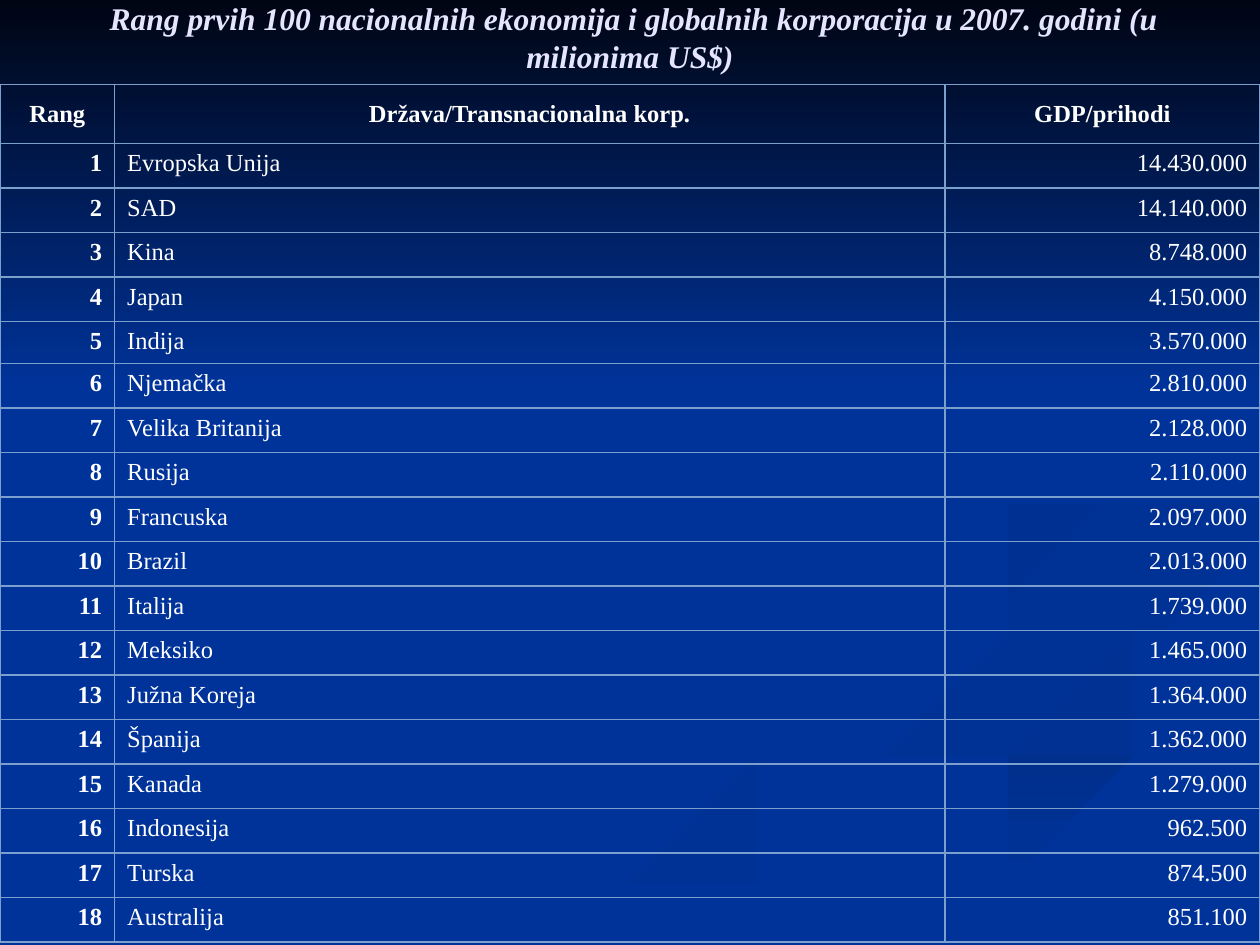
import pptx
import pptx.dml.color
import pptx.enum.shapes
import pptx.enum.text
import pptx.oxml
import pptx.oxml.ns
import pptx.util
from pptx.util import Inches

ALIGN = pptx.enum.text.PP_ALIGN
ANCHOR = pptx.enum.text.MSO_ANCHOR
BLUE = "003399"
FONT = "Times New Roman"
BORDER = "7BA0CD"
TITLE = " Rang prvih 100 nacionalnih ekonomija i globalnih korporacija u 2007. godini (u milionima US$)"
HEADERS = ["Rang", "Država/Transnacionalna korp.", "GDP/prihodi"]
ECONOMIES = [
    ("Evropska Unija", "14.430.000"), ("SAD", "14.140.000"),
    ("Kina", "8.748.000"), ("Japan", "4.150.000"),
    ("Indija", "3.570.000"), ("Njemačka", "2.810.000"),
    ("Velika Britanija", "2.128.000"), ("Rusija", "2.110.000"),
    ("Francuska", "2.097.000"), ("Brazil", "2.013.000"),
    ("Italija", "1.739.000"), ("Meksiko", "1.465.000"),
    ("Južna Koreja", "1.364.000"), ("Španija", "1.362.000"),
    ("Kanada", "1.279.000"), ("Indonesija", "962.500"),
    ("Turska", "874.500"), ("Australija", "851.100"),
]
RIBBONS = [
    ((BLUE, "003193"), 0, [
        (7.81, 5.53), (6.82, 5.19), (5.94, 4.85), (5.75, 4.59), (5.81, 4.84), (6.97, 5.25),
        (7.81, 5.56), (7.74, 5.83), (6.16, 6.29), (4.17, 6.9), (3, 7.49), (3.61, 7.49),
        (5.64, 6.65), (7.56, 6.14), (8, 5.81)]),
    ((BLUE, "003193"), 45, [
        (9.43, 5.7), (9.05, 5.4), (7.92, 5.09), (7.24, 4.64), (7.46, 5), (8.38, 5.36),
        (9.18, 5.81), (8.94, 6.05), (9.32, 5.89)]),
    (("002F8C", BLUE), 90, [
        (5.03, 7.49), (5.71, 7.49), (7.22, 6.82), (9.98, 6.09), (9.98, 5.81), (8.31, 6.29),
        (6.3, 6.93)]),
    ((BLUE, BLUE), 0, [
        (7.25, 4.64), (7.93, 5.09), (9.05, 5.4), (9.43, 5.7), (8.92, 6.05), (7.04, 6.55),
        (4.77, 7.49), (5.03, 7.49), (6.96, 6.69), (9.99, 5.81), (9.99, 5.38), (8.66, 5.09),
        (7.81, 4.63), (8.5, 4.27), (9.99, 4.02), (9.99, 3.87), (8.3, 4.15)]),
    (("003091", BLUE), 45, [
        (7.81, 4.6), (8.26, 4.96), (8.05, 4.72), (8.43, 4.48), (9.98, 4.2), (9.98, 4.02),
        (8.35, 4.3)]),
    (("002F8E", BLUE), 45, [
        (6.83, 4.3), (8.25, 4.02), (8.94, 3.44), (8.54, 2.83), (7.62, 2.33), (8.46, 2.79),
        (8.89, 3.35), (8.42, 3.78), (6.49, 4.2), (5.77, 4.62), (6.22, 5), (5.93, 4.7)]),
]


def color(value):
    return pptx.dml.color.RGBColor.from_string(value)


def write(para, words, align, **formats):
    para.alignment = align
    span = para.add_run()
    span.text = words
    span.font.color.rgb = color(formats.pop("ink", "FFFFFF"))
    for name, value in {"name": FONT, **formats}.items():
        setattr(span.font, name, value)


def smooth_outline(points, steps=5):
    bounds = [(min(axis), max(axis)) for axis in zip(*points)]
    curve = []
    for index in range(len(points)):
        corners = [points[(index + shift) % len(points)] for shift in (-1, 0, 1, 2)]
        for step in range(steps):
            t = step / steps
            values = [b + t * (c - a + t * (2 * a - 5 * b + 4 * c - d
                                            + t * (3 * (b - c) + d - a))) / 2
                      for a, b, c, d in zip(*corners)]
            curve.append([min(max(value, low), high)
                          for value, (low, high) in zip(values, bounds)])
    return curve


def shade(shape, stops, angle):
    shape.shadow.inherit = False
    shape.line.fill.background()
    shape.fill.gradient()
    shape.fill.gradient_angle = -angle % 360
    for stop, value in zip(shape.fill.gradient_stops, stops):
        stop.color.rgb = color(value)


def add_backdrop(page, left, top, width):
    page.background.fill.solid()
    page.background.fill.fore_color.rgb = color(BLUE)
    for stops, angle, points in RIBBONS:
        curve = smooth_outline(points)
        outline = page.shapes.build_freeform(*curve[0], scale=Inches(1))
        outline.add_line_segments(curve[1:], close=True)
        shade(outline.convert_to_shape(Inches(left), Inches(top)), stops, angle)
    band = page.shapes.add_shape(pptx.enum.shapes.MSO_SHAPE.RECTANGLE,
                                 *map(Inches, (left, top, width, 3.08)))
    shade(band, ("000514", BLUE), 90)


def add_title(page, left, top, width, height):
    box = page.shapes.add_textbox(*map(Inches, (left, top, width, height)))
    frame = box.text_frame
    for name, value in {"word_wrap": True, "vertical_anchor": ANCHOR.MIDDLE}.items():
        setattr(frame, name, value)
    write(frame.paragraphs[0], TITLE, ALIGN.CENTER, ink="E5E5FF",
          size=pptx.util.Pt(18), bold=True, italic=True)


def draw_borders(cell):
    properties = cell._tc.get_or_add_tcPr()
    for side in ("lnL", "lnR", "lnT", "lnB"):
        properties.append(pptx.oxml.parse_xml(
            f'<a:{side} {pptx.oxml.ns.nsdecls("a")} w="12700"><a:solidFill>'
            f'<a:srgbClr val="{BORDER}"/></a:solidFill></a:{side}>'))


def add_ranking(page, left, top, width, height):
    rows = [HEADERS] + [(str(rank), *entry) for rank, entry in enumerate(ECONOMIES, 1)]
    frame = page.shapes.add_table(len(rows), len(HEADERS),
                                  *map(Inches, (left, top, width, height)))
    table = frame.table
    table.first_row = table.horz_banding = False
    special = {0: 0.47, 5: 0.33}
    regular = (height - sum(special.values())) / (len(rows) - len(special))
    for column, column_width in zip(table.columns, (0.91, 6.59, 2.5)):
        column.width = Inches(column_width)
    for row_index, row in enumerate(rows):
        table.rows[row_index].height = Inches(special.get(row_index, regular))
        header = row_index == 0
        for column_index, words in enumerate(row):
            cell = table.cell(row_index, column_index)
            draw_borders(cell)
            cell.fill.background()
            cell.vertical_anchor = ANCHOR.MIDDLE if header else ANCHOR.TOP
            body_align = ALIGN.LEFT if column_index == 1 else ALIGN.RIGHT
            write(cell.text_frame.paragraphs[0], words,
                  ALIGN.CENTER if header else body_align,
                  size=pptx.util.Pt(14), bold=header or column_index == 0)


def main():
    deck = pptx.Presentation()
    deck.slide_width, deck.slide_height = Inches(10), Inches(7.5)
    page = deck.slides.add_slide(deck.slide_layouts[6])
    add_backdrop(page, 0, 0, 10)
    add_title(page, 0.5, 0, 9, 0.58)
    add_ranking(page, 0, 0.67, 10, 6.81)
    deck.save("out.pptx")


if __name__ == "__main__":
    main()
